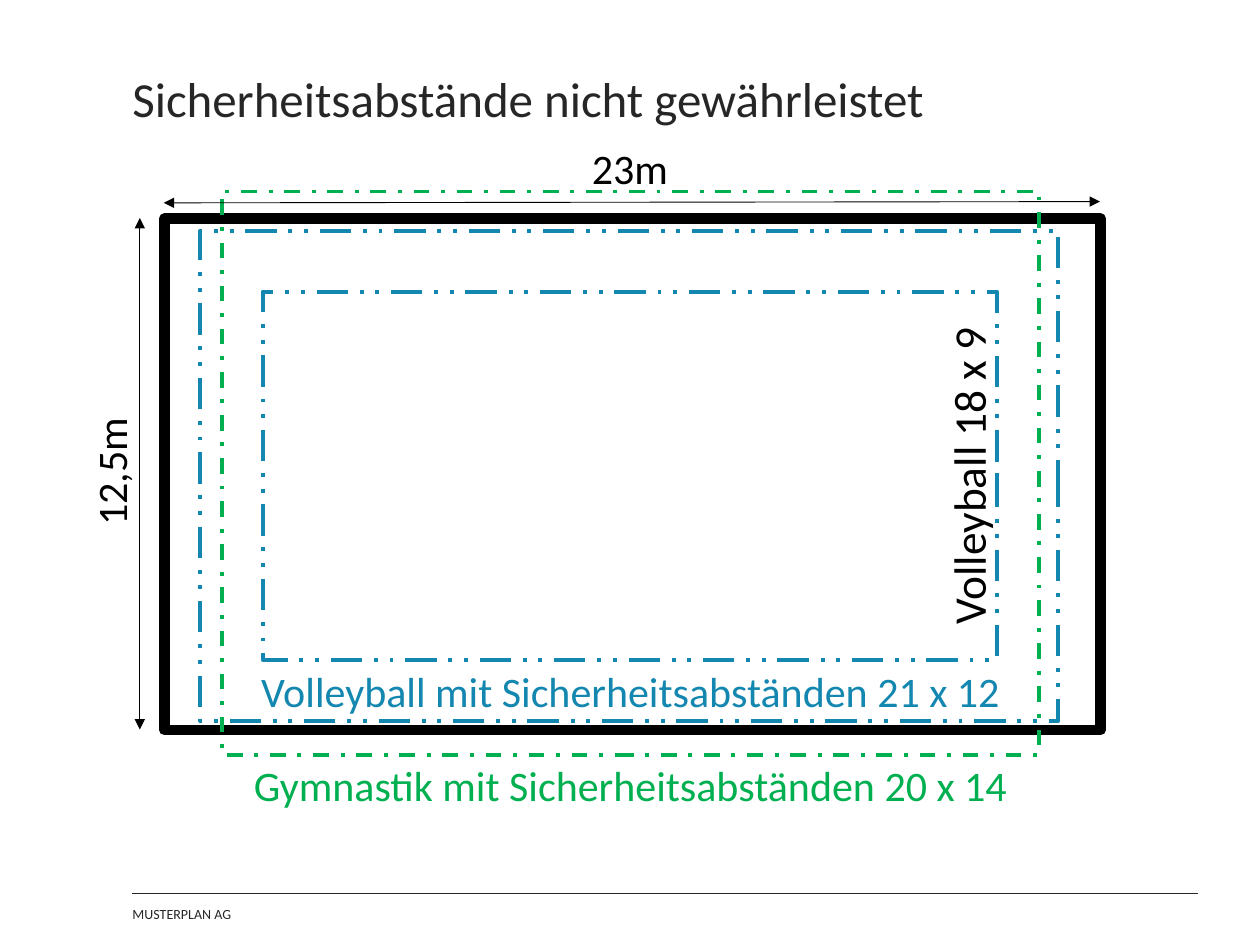
"""Build a slide comparing court sizes and safety margins with a sports hall."""
from lxml import etree
from pptx import Presentation
from pptx import util as u
from pptx.dml.color import RGBColor
from pptx.enum import dml, shapes, text
from pptx.oxml.ns import qn

COLORS = {"black": "000000", "dark": "262626", "blue": "1387AF", "green": "00B050"}


def write_text(shape, content, size, color, align, anchor, spacing, left_inset=0.1):
    frame = shape.text_frame
    frame.word_wrap = True
    frame.auto_size = text.MSO_AUTO_SIZE.NONE
    frame.vertical_anchor = anchor
    frame.margin_left, frame.margin_right = u.Inches(left_inset), u.Inches(0.1)
    frame.margin_top = frame.margin_bottom = u.Inches(0.05)
    paragraph = frame.paragraphs[0]
    paragraph.alignment = align
    paragraph.line_spacing = spacing
    run = paragraph.add_run()
    run.text = content
    run.font.size = u.Pt(size)
    run.font.name = "Calibri"
    run.font.color.rgb = RGBColor.from_string(COLORS[color])


def add_line(slide, start, end, color, arrows):
    line = slide.shapes.add_connector(
        shapes.MSO_CONNECTOR.STRAIGHT, *(u.Inches(value) for value in start + end))
    line.line.width = u.Pt(0.5)
    line.line.color.rgb = RGBColor.from_string(COLORS[color])
    properties = line._element.spPr
    etree.SubElement(properties, qn("a:effectLst"))
    if arrows:
        outline = properties.find(qn("a:ln"))
        for tag in ("a:headEnd", "a:tailEnd"):
            etree.SubElement(outline, qn(tag), type="triangle")


presentation = Presentation()
presentation.slide_width, presentation.slide_height = u.Inches(10), u.Inches(7.5)
slide = presentation.slides.add_slide(presentation.slide_layouts[5])

title = slide.shapes.title
title.left, title.top = u.Inches(1.05), u.Inches(0.59)
title.width, title.height = u.Inches(8.46), u.Inches(0.43)
write_text(title, "Sicherheitsabstände nicht gewährleistet", 28, "dark",
           text.PP_ALIGN.LEFT, text.MSO_ANCHOR.MIDDLE, 0.9, 0)

add_line(slide, (1.05, 7.09), (9.51, 7.09), "dark", False)
footer = slide.shapes.add_textbox(u.Inches(1.05), u.Inches(7.15), u.Inches(1.15), u.Inches(0.2))
write_text(footer, "MUSTERPLAN AG", 8, "dark",
           text.PP_ALIGN.LEFT, text.MSO_ANCHOR.MIDDLE, 1.0, 0)

courts = [
    (2.99, 0.05, 4.06, 7.43, 270, "black", 6, None),
    (3.05, 0.37, 3.89, 6.81, 270, "blue", 2.25, dml.MSO_LINE.DASH_DOT_DOT),
    (3.54, 0.86, 2.92, 5.83, 270, "blue", 2.25, dml.MSO_LINE.DASH_DOT_DOT),
    (1.76, 1.52, 6.49, 4.47, 0, "green", 2.25, dml.MSO_LINE.DASH_DOT),
]
for left, top, width, height, rotation, color, weight, dash in courts:
    court = slide.shapes.add_shape(
        shapes.MSO_SHAPE.RECTANGLE,
        u.Inches(left), u.Inches(top), u.Inches(width), u.Inches(height))
    court.rotation = rotation
    court.shadow.inherit = False
    court.fill.background()
    court.line.color.rgb = RGBColor.from_string(COLORS[color])
    court.line.width = u.Pt(weight)
    if dash:
        court.line.dash_style = dash

add_line(slide, (1.3, 1.61), (8.73, 1.6), "black", True)
add_line(slide, (1.11, 1.73), (1.11, 5.79), "black", True)

labels = [
    ("23m", 2.99, 1.14, 4.02, 0, 24, "black"),
    ("12,5m", -1.11, 3.53, 4.02, 270, 24, "black"),
    ("Volleyball mit Sicherheitsabständen 21 x 12", 1.2, 5.29, 7.61, 0, 24, "blue"),
    ("Volleyball 18 x 9", 5.71, 3.56, 4.02, 270, 25.9, "black"),
    ("Gymnastik mit Sicherheitsabständen 20 x 14", 1.42, 6.04, 7.17, 0, 24, "green"),
]
for content, left, top, width, rotation, size, color in labels:
    label = slide.shapes.add_textbox(
        u.Inches(left), u.Inches(top), u.Inches(width), u.Inches(0.43))
    label.rotation = rotation
    write_text(label, content, size, color,
               text.PP_ALIGN.CENTER, text.MSO_ANCHOR.BOTTOM, 0.7)

presentation.save("out.pptx")
